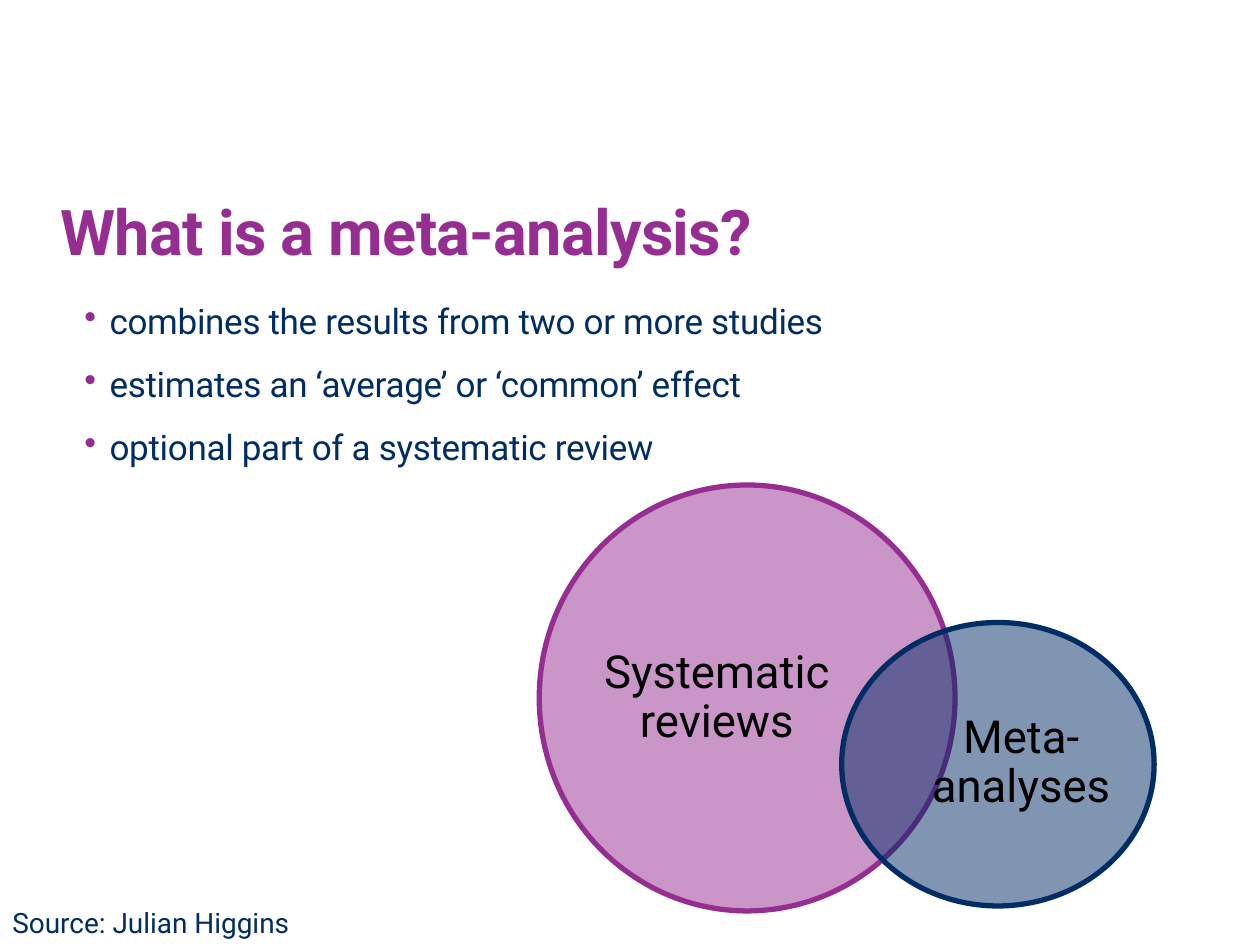
from typing import NamedTuple

from lxml.etree import SubElement
from pptx import Presentation
from pptx.dml.color import RGBColor
from pptx.enum.shapes import MSO_SHAPE as Preset
from pptx.enum.text import MSO_ANCHOR as Anchor, PP_ALIGN as Align
from pptx.oxml.ns import qn
from pptx.util import Inches, Pt

WIDTH, HEIGHT = Inches(10), Inches(7.5)
FONT = "Roboto"
PURPLE, NAVY, BLACK = "962D91", "002D64", "000000"


class Area(NamedTuple):
    """Left, top, width and height as percentages of the slide."""
    left: float
    top: float
    width: float
    height: float

    def lengths(self) -> tuple:
        return tuple(round(share * side / 100)
                     for share, side in zip(self, (WIDTH, HEIGHT) * 2))


class VennSet(NamedTuple):
    label: str
    color: str
    circle: Area
    label_area: Area


VENN_SETS = [
    VennSet("Systematic reviews", PURPLE,
            Area(42.8, 51.33, 33, 45.07), Area(47.4, 56.67, 19, 34.4)),
    VennSet("Meta- analyses", NAVY,
            Area(66.8, 65.87, 24.8, 30), Area(73.9, 69.33, 14.3, 22.93)),
]
POINTS = [
    "combines the results from two or more studies",
    "estimates an ‘average’ or ‘common’ effect",
    "optional part of a systematic review",
]


def rgb(color: str) -> RGBColor:
    return RGBColor.from_string(color)


def add_bullet(paragraph, color: str, indent: float = 0.2) -> None:
    properties = paragraph._p.get_or_add_pPr()
    properties.set("marL", str(Inches(indent)))
    properties.set("indent", str(-Inches(indent)))
    bullet_color = SubElement(properties, qn("a:buClr"))
    SubElement(bullet_color, qn("a:srgbClr"), val=color)
    SubElement(properties, qn("a:buChar"), char="•")


def write(shape, *lines: str, size: float, color: str, bold: bool = False,
          align=Align.LEFT, anchor=Anchor.TOP, spacing: float = 1, gap: float = 0,
          tracking: float = 0, bullet: str = "", inset: bool = False) -> None:
    frame = shape.text_frame
    frame.word_wrap = True
    frame.vertical_anchor = anchor
    if not inset:
        frame.margin_left = frame.margin_top = frame.margin_right = frame.margin_bottom = 0
    for number, line in enumerate(lines):
        paragraph = frame.add_paragraph() if number else frame.paragraphs[0]
        paragraph.alignment = align
        paragraph.line_spacing = spacing
        paragraph.space_before = Pt(gap if number else 0)
        if bullet:
            add_bullet(paragraph, bullet)
        run = paragraph.add_run()
        run.text = line
        font = run.font
        font.name, font.size, font.bold = FONT, Pt(size), bold
        font.color.rgb = rgb(color)
        if tracking:
            run._r.get_or_add_rPr().set("spc", str(round(tracking * 100)))


def add_text(shapes, area: Area, *lines: str, **formats) -> None:
    write(shapes.add_textbox(*area.lengths()), *lines, **formats)


def add_venn_set(shapes, venn_set: VennSet) -> None:
    circle = shapes.add_shape(Preset.OVAL, *venn_set.circle.lengths())
    circle.shadow.inherit = False
    circle.fill.solid()
    circle.fill.fore_color.rgb = rgb(venn_set.color)
    fill_color = circle._element.spPr.find(qn("a:solidFill")).find(qn("a:srgbClr"))
    SubElement(fill_color, qn("a:alpha"), val="50000")
    circle.line.color.rgb = rgb(venn_set.color)
    circle.line.width = Pt(3)
    add_text(shapes, venn_set.label_area, venn_set.label, size=26, color=BLACK,
             align=Align.CENTER, anchor=Anchor.MIDDLE, spacing=0.9)


def main() -> None:
    presentation = Presentation()
    presentation.slide_width, presentation.slide_height = WIDTH, HEIGHT
    slide = presentation.slides.add_slide(presentation.slide_layouts[5])

    # Title
    title = slide.shapes.title
    title.left, title.top, title.width, title.height = Area(4.8, 19.2, 66.9, 9.2).lengths()
    write(title, "What is a meta-analysis?", size=36, color=PURPLE, bold=True,
          anchor=Anchor.BOTTOM, tracking=-0.4)

    # Bulleted points and source line
    add_text(slide.shapes, Area(6.7, 31.73, 90, 60.27), *POINTS, size=20, color=NAVY,
             gap=12, tracking=-0.2, bullet=PURPLE)
    add_text(slide.shapes, Area(0, 95.2, 27.9, 4.93), "Source: Julian Higgins",
             size=16, color=NAVY, inset=True)

    # Overlapping circles
    venn_diagram = slide.shapes.add_group_shape()
    for venn_set in VENN_SETS:
        add_venn_set(venn_diagram.shapes, venn_set)

    presentation.save("out.pptx")


if __name__ == "__main__":
    main()
